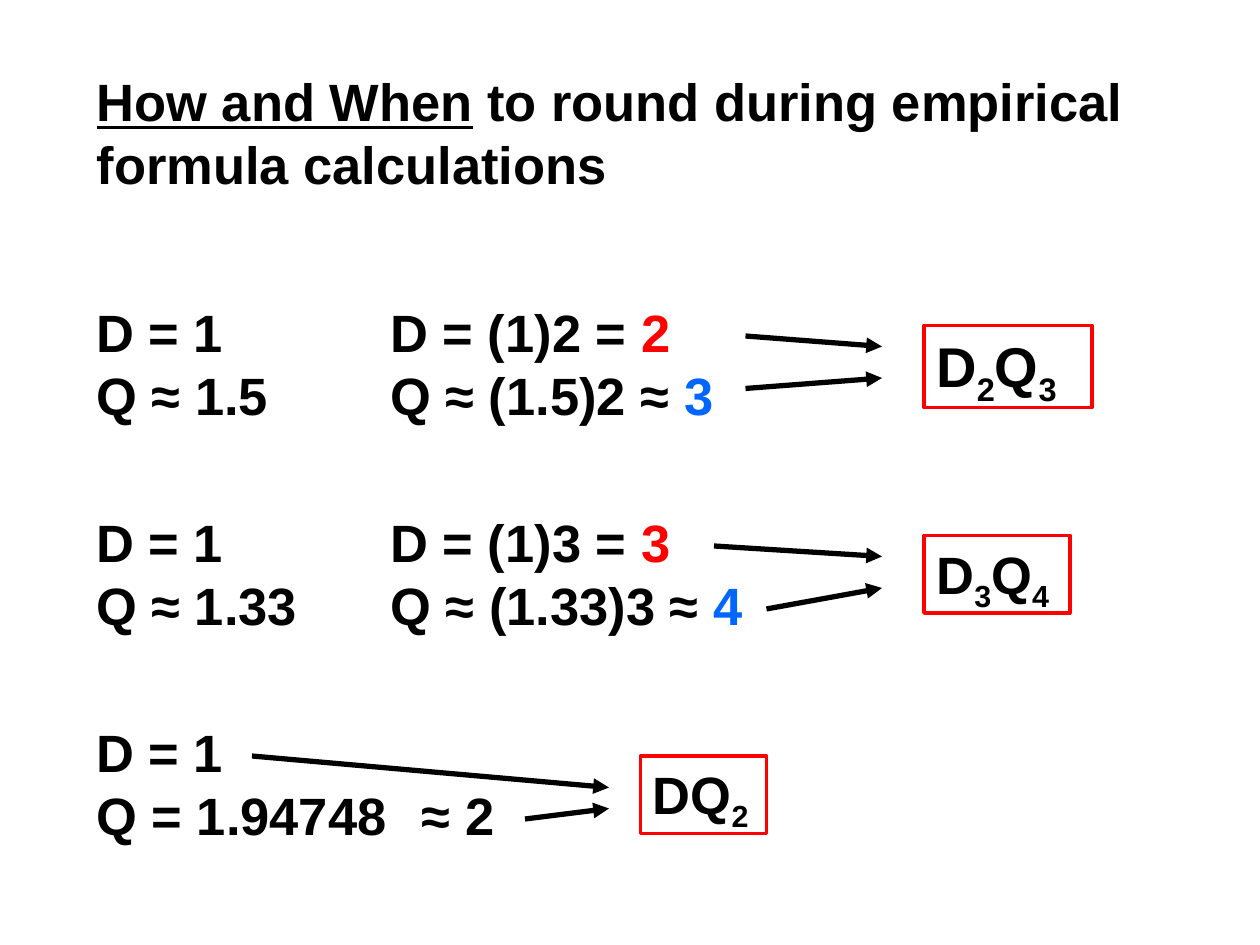
from lxml.etree import SubElement
from pptx import Presentation
from pptx.dml.color import RGBColor
from pptx.enum.shapes import MSO_CONNECTOR as LINE, MSO_SHAPE as SHAPE
from pptx.enum.text import MSO_ANCHOR as ANCHOR, PP_ALIGN as ALIGN
from pptx.oxml.ns import qn
from pptx.util import Pt

PX = 7620  # 120 px to the inch
BLACK = RGBColor(0, 0, 0)
RED = RGBColor(255, 0, 0)
BLUE = RGBColor(0, 102, 255)


def write(shape, lines, size=30, wrap=True):
    """Fill a shape with lines, each a list of (text, colour) runs."""
    frame = shape.text_frame
    frame.word_wrap = wrap
    frame.vertical_anchor = ANCHOR.TOP
    for i, line in enumerate(lines):
        para = frame.add_paragraph() if i else frame.paragraphs[0]
        para.alignment = ALIGN.LEFT
        for text, color in line:
            run = para.add_run()
            run.text = text
            font = run.font
            font.name, font.size, font.bold = "Arial", Pt(size), True
            font.color.rgb = color


def place(shape, *box):
    shape.left, shape.top, shape.width, shape.height = [v * PX for v in box]


deck = Presentation()
deck.slide_width, deck.slide_height = 1200 * PX, 900 * PX
slide = deck.slides.add_slide(deck.slide_layouts[5])
shapes = slide.shapes

title = shapes.title
place(title, 80, 60, 1060, 132)
write(title, [[("How and When", BLACK),
               (" to round during empirical formula calculations", BLACK)]])
title.text_frame.paragraphs[0].runs[0].font.underline = True

# Ratios and the multiplied ratios: left, top, width, height, lines
notes = [
    (80, 280, 200, 132, [[("D = 1", BLACK)], [("Q ≈ 1.5", BLACK)]]),
    (360, 280, 350, 132, [[("D = (1)2 = ", BLACK), ("2", RED)],
                          [("Q ≈ (1.5)2 ≈ ", BLACK), ("3", BLUE)]]),
    (80, 480, 216, 132, [[("D = 1", BLACK)], [("Q ≈ 1.33", BLACK)]]),
    (360, 480, 390, 132, [[("D = (1)3 = ", BLACK), ("3", RED)],
                          [("Q ≈ (1.33)3 ≈ ", BLACK), ("4", BLUE)]]),
    (80, 680, 340, 132, [[("D = 1", BLACK)], [("Q = 1.94748", BLACK)]]),
    (390, 740, 100, 72, [[("≈ 2", BLACK)]]),
]
for *box, lines in notes:
    note = shapes.add_textbox(0, 0, 0, 0)
    place(note, *box)
    write(note, lines)

# Resulting formulas: left, top, width, height, size, parts
results = [
    (880, 310, 160, 78, 32, "D2Q3"),
    (880, 510, 139, 74, 30, "D3Q4"),
    (610, 720, 120, 74, 30, "DQ2"),
]
for *box, size, parts in results:
    rect = shapes.add_shape(SHAPE.RECTANGLE, 0, 0, 0, 0)
    place(rect, *box)
    rect.shadow.inherit = False
    rect.fill.background()
    rect.line.color.rgb = RED
    rect.line.width = Pt(2)
    write(rect, [[(part, BLACK) for part in parts]], size, False)
    for run in rect.text_frame.paragraphs[0].runs:
        if run.text.isdigit():
            run.font._element.set("baseline", "-25000")

arrows = [
    (710, 320, 840, 330), (710, 370, 840, 360),
    (680, 520, 840, 530), (730, 580, 840, 560),
    (240, 720, 580, 750), (500, 780, 580, 770),
]
for ends in arrows:
    arrow = shapes.add_connector(LINE.STRAIGHT, *[v * PX for v in ends])
    arrow.line.color.rgb = BLACK
    arrow.line.width = Pt(3)
    SubElement(arrow.line._get_or_add_ln(), qn("a:tailEnd"), type="triangle")
    SubElement(arrow._element.spPr, qn("a:effectLst"))

deck.save("out.pptx")
